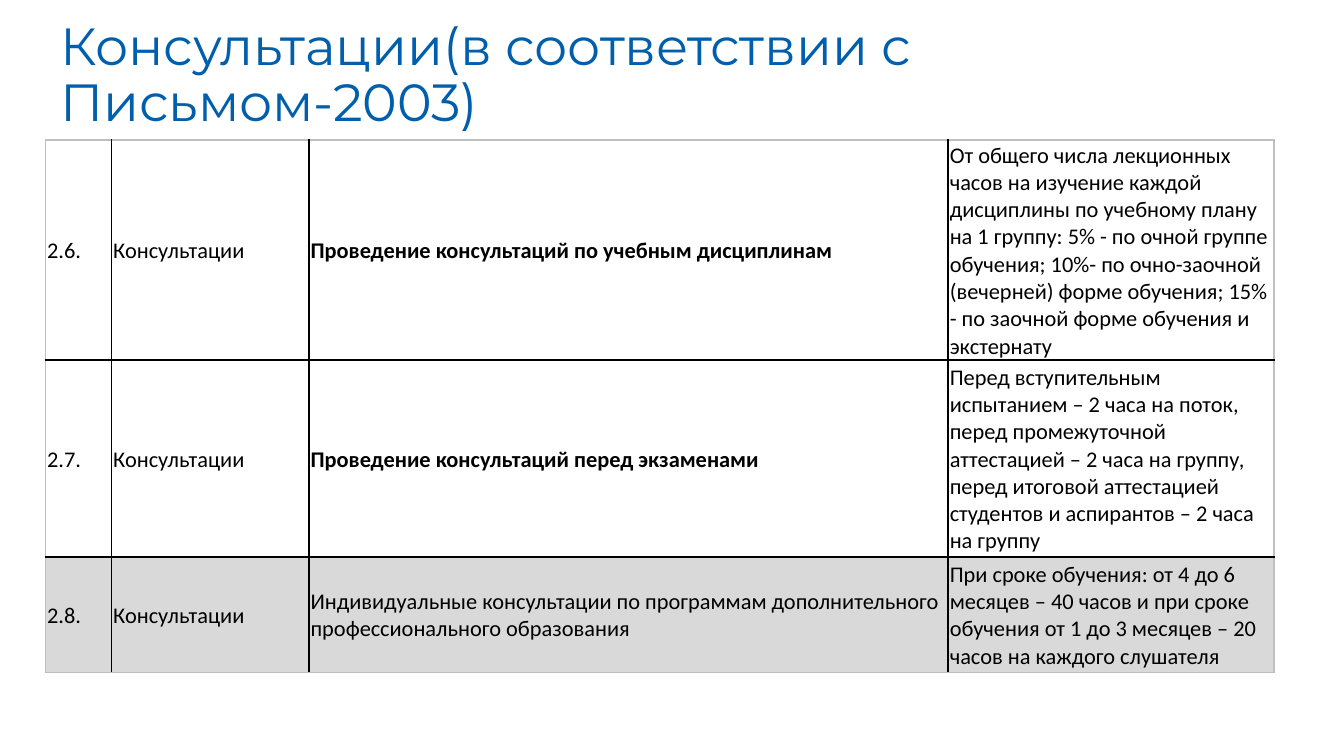
from lxml import etree
from pptx import Presentation
from pptx.dml.color import RGBColor
from pptx.enum.text import MSO_ANCHOR, PP_ALIGN
from pptx.oxml.ns import qn
from pptx.util import Cm, Pt

MIDDLE, BOTTOM = MSO_ANCHOR.MIDDLE, MSO_ANCHOR.BOTTOM
LEFT = PP_ALIGN.LEFT

BLUE = RGBColor(0x00, 0x5F, 0xAC)
BLACK = RGBColor(0x00, 0x00, 0x00)
WHITE = RGBColor(0xFF, 0xFF, 0xFF)
LIGHT_GREY = RGBColor(0xD9, 0xD9, 0xD9)
FRAME_GREY = RGBColor(0xBF, 0xBF, 0xBF)

COLUMN_WIDTHS = [1.25, 3.73, 12.08, 6.16]
ROW_HEIGHTS = [4.14, 3.72, 2.18]
ROW_FILLS = [WHITE, WHITE, LIGHT_GREY]
ROWS = [
    ("2.6.", "Консультации", "Проведение консультаций по учебным дисциплинам",
     "От общего числа лекционных часов на изучение каждой дисциплины по учебному "
     "плану на 1 группу: 5% - по очной группе обучения; 10%- по очно-заочной "
     "(вечерней) форме обучения; 15% - по заочной форме обучения и экстернату"),
    ("2.7.", "Консультации", "Проведение консультаций перед экзаменами",
     "Перед вступительным испытанием – 2 часа на поток, перед промежуточной "
     "аттестацией – 2 часа на группу, перед итоговой аттестацией студентов "
     "и аспирантов – 2 часа на группу"),
    ("2.8.", "Консультации",
     "Индивидуальные консультации по программам дополнительного "
     "профессионального образования",
     "При сроке обучения: от 4 до 6 месяцев – 40 часов и при сроке обучения "
     "от 1 до 3 месяцев – 20 часов на каждого слушателя"),
]
CELL_FORMAT = {
    "margin_left": Cm(0.03), "margin_right": Cm(0.03),
    "margin_top": Cm(0.03), "margin_bottom": Cm(0),
    "vertical_anchor": MIDDLE,
}


def set_format(target, values):
    for name, value in values.items():
        setattr(target, name, value)


def add_border(cell, side, color, width):
    line = etree.SubElement(cell._tc.get_or_add_tcPr(), qn(f"a:ln{side}"), w=str(width))
    fill = etree.SubElement(line, qn("a:solidFill"))
    etree.SubElement(fill, qn("a:srgbClr"), val=str(color))


deck = Presentation()
deck.slide_width, deck.slide_height = Cm(25.4), Cm(14.29)
page = deck.slides.add_slide(deck.slide_layouts[5])

# Title
title = page.shapes.title
set_format(title, {"left": Cm(0.89), "top": Cm(0.84),
                   "width": Cm(19.05), "height": Cm(1.8)})
set_format(title.text_frame, {"text": "Консультации(в соответствии с Письмом-2003)",
                              "word_wrap": True, "vertical_anchor": BOTTOM})
para = title.text_frame.paragraphs[0]
set_format(para, {"alignment": LEFT, "line_spacing": 0.9})
set_format(para.runs[0].font, {"name": "Montserrat", "size": Pt(28)})
para.runs[0].font.color.rgb = BLUE

# Table grid
table = page.shapes.add_table(
    len(ROWS), len(COLUMN_WIDTHS), Cm(0.86), Cm(2.65),
    Cm(sum(COLUMN_WIDTHS)), Cm(sum(ROW_HEIGHTS))).table
set_format(table, {"first_row": False, "horz_banding": False})
for column, width in zip(table.columns, COLUMN_WIDTHS):
    column.width = Cm(width)
for row, height in zip(table.rows, ROW_HEIGHTS):
    row.height = Cm(height)

# Cells: grey outer frame, black inner lines
last_row, last_column = len(ROWS) - 1, len(COLUMN_WIDTHS) - 1
for i, texts in enumerate(ROWS):
    for j, text in enumerate(texts):
        cell = table.cell(i, j)
        set_format(cell, CELL_FORMAT)
        outer_sides = {"L": j == 0, "R": j == last_column,
                       "T": i == 0, "B": i == last_row}
        for side, outer in outer_sides.items():
            add_border(cell, side, FRAME_GREY if outer else BLACK, Pt(1))
        cell.fill.solid()
        cell.fill.fore_color.rgb = ROW_FILLS[i]
        cell.text = text
        span = cell.text_frame.paragraphs[0].runs[0]
        set_format(span.font, {"name": "Calibri", "size": Pt(12),
                               "bold": j == 2 and i < last_row})
        span.font.color.rgb = BLACK

deck.save("out.pptx")
